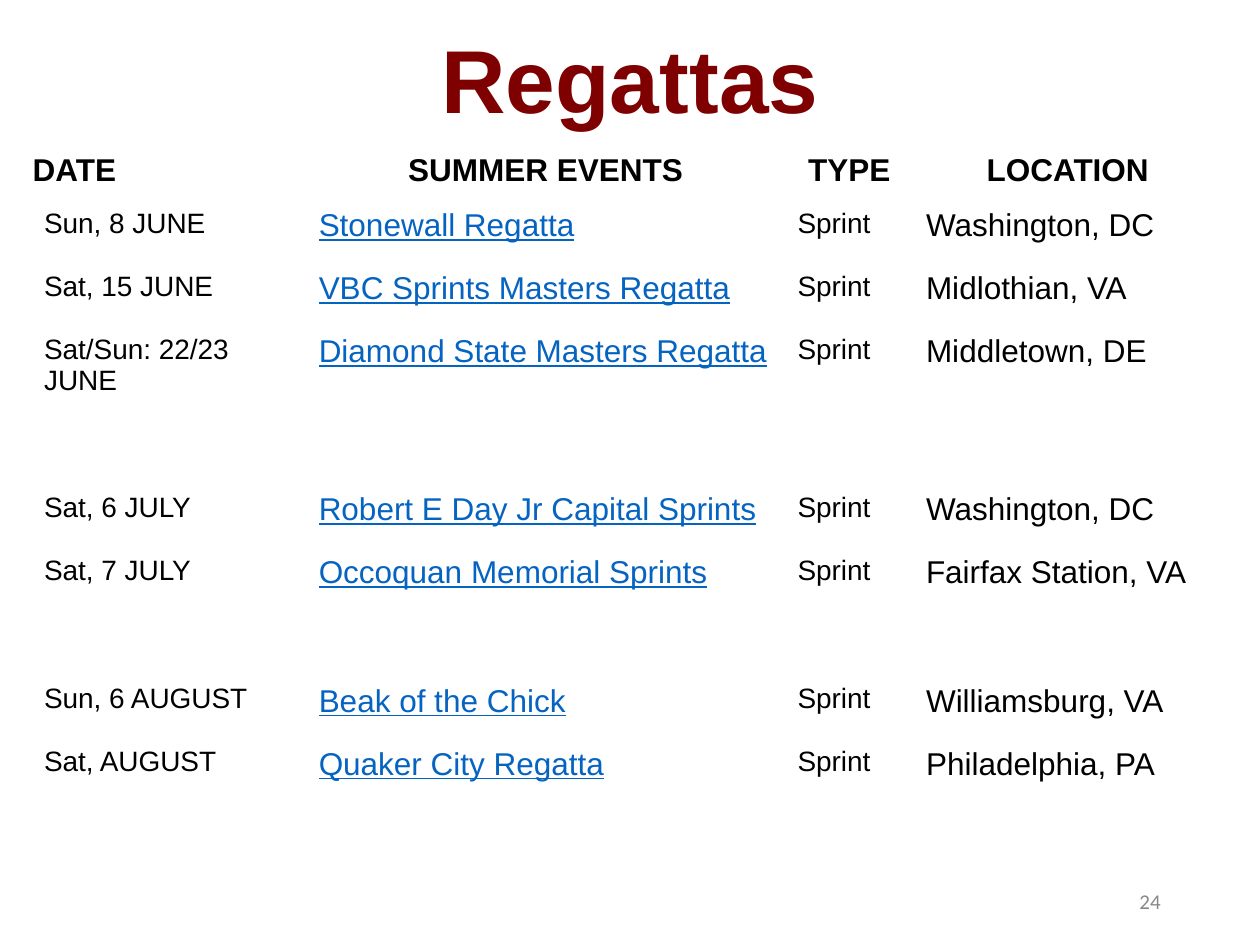
from pptx import Presentation
from pptx.dml.color import RGBColor
from pptx.enum.text import MSO_ANCHOR, PP_ALIGN
from pptx.util import Inches, Pt

COLUMN_WIDTHS = [2.18, 3.8, 1.02, 2.45]
HEADINGS = ["DATE", "SUMMER EVENTS", "TYPE", "LOCATION"]
MONTHS = [
    [
        ("Sun, 8 JUNE", "Stonewall Regatta", "Washington, DC"),
        ("Sat, 15 JUNE", "VBC Sprints Masters Regatta", "Midlothian, VA"),
        ("Sat/Sun: 22/23 JUNE", "Diamond State Masters Regatta", "Middletown, DE"),
    ],
    [
        ("Sat, 6 JULY", "Robert E Day Jr Capital Sprints", "Washington, DC"),
        ("Sat, 7 JULY", "Occoquan Memorial Sprints", "Fairfax Station, VA"),
    ],
    [
        ("Sun, 6 AUGUST", "Beak of the Chick", "Williamsburg, VA"),
        ("Sat, AUGUST", "Quaker City Regatta", "Philadelphia, PA"),
    ],
]
HEADING_HEIGHT, EVENT_HEIGHT, GAP_HEIGHT = 0.41, 0.48, 0.52
NO_STYLE = "{2D5ABB26-0587-4C30-8999-92F81FD0307C}"


def color(value):
    return RGBColor.from_string(value)


def write(frame, text, size=18, font="Arial", fill="000000", bold=False,
          underline=False, align=PP_ALIGN.LEFT, spacing=None):
    para = frame.paragraphs[0]
    para.alignment = align
    para.line_spacing = spacing
    span = para.add_run()
    span.text = text
    span.font.name = font
    span.font.size = Pt(size)
    span.font.bold = bold
    span.font.underline = underline
    span.font.color.rgb = color(fill)


def set_margins(target, left, top, right, bottom):
    target.margin_left, target.margin_top = Inches(left), Inches(top)
    target.margin_right, target.margin_bottom = Inches(right), Inches(bottom)


def add_title(slide, text):
    title = slide.shapes.title
    title.left, title.top = Inches(0), Inches(0)
    title.width, title.height = Inches(10), Inches(1.34)
    frame = title.text_frame
    frame.vertical_anchor = MSO_ANCHOR.MIDDLE
    set_margins(frame, 0.1, 0.1, 0.1, 0.1)
    write(frame, text, size=51, fill="7E0000", bold=True,
          align=PP_ALIGN.CENTER, spacing=0.9)


def add_page_number(slide, text):
    box = slide.shapes.add_textbox(Inches(7.06), Inches(6.95), Inches(2.25), Inches(0.4))
    frame = box.text_frame
    frame.word_wrap = True
    frame.vertical_anchor = MSO_ANCHOR.MIDDLE
    write(frame, text, size=12, font="Calibri", fill="888888", align=PP_ALIGN.RIGHT)


def fill_headings(row):
    for index, (cell, heading) in enumerate(zip(row.cells, HEADINGS)):
        set_margins(cell, 0.01, 0.01, 0.01, 0)
        cell.vertical_anchor = MSO_ANCHOR.MIDDLE
        write(cell.text_frame, heading, bold=True,
              align=PP_ALIGN.CENTER if index else PP_ALIGN.LEFT)


def fill_event(row, event):
    date, name, location = event
    formats = [
        (date, {"size": 16}),
        (name, {"fill": "0563C1", "underline": True}),
        ("Sprint", {"size": 16}),
        (location, {}),
    ]
    for cell, (text, options) in zip(row.cells, formats):
        set_margins(cell, 0.1, 0.1, 0.1, 0.1)
        write(cell.text_frame, text, **options)


def add_schedule(slide):
    events = list(MONTHS[0])
    for month in MONTHS[1:]:
        events += [None, *month]
    heights = [HEADING_HEIGHT] + [EVENT_HEIGHT if event else GAP_HEIGHT for event in events]
    frame = slide.shapes.add_table(
        len(heights), len(COLUMN_WIDTHS), Inches(0.25), Inches(1.14),
        Inches(sum(COLUMN_WIDTHS)), Inches(sum(heights)))
    table = frame.table
    table.first_row = table.horz_banding = False
    table._tbl.tblPr.find("{*}tableStyleId").text = NO_STYLE
    for column, width in zip(table.columns, COLUMN_WIDTHS):
        column.width = Inches(width)
    for row, height in zip(table.rows, heights):
        row.height = Inches(height)
    for cell in table.iter_cells():
        cell.fill.background()
    rows = list(table.rows)
    fill_headings(rows[0])
    for row, event in zip(rows[1:], events):
        if event:
            fill_event(row, event)


def main():
    deck = Presentation()
    deck.slide_width, deck.slide_height = Inches(10), Inches(7.5)
    slide = deck.slides.add_slide(deck.slide_layouts[5])
    add_page_number(slide, "24")
    add_title(slide, "Regattas")
    add_schedule(slide)
    deck.save("out.pptx")


if __name__ == "__main__":
    main()
